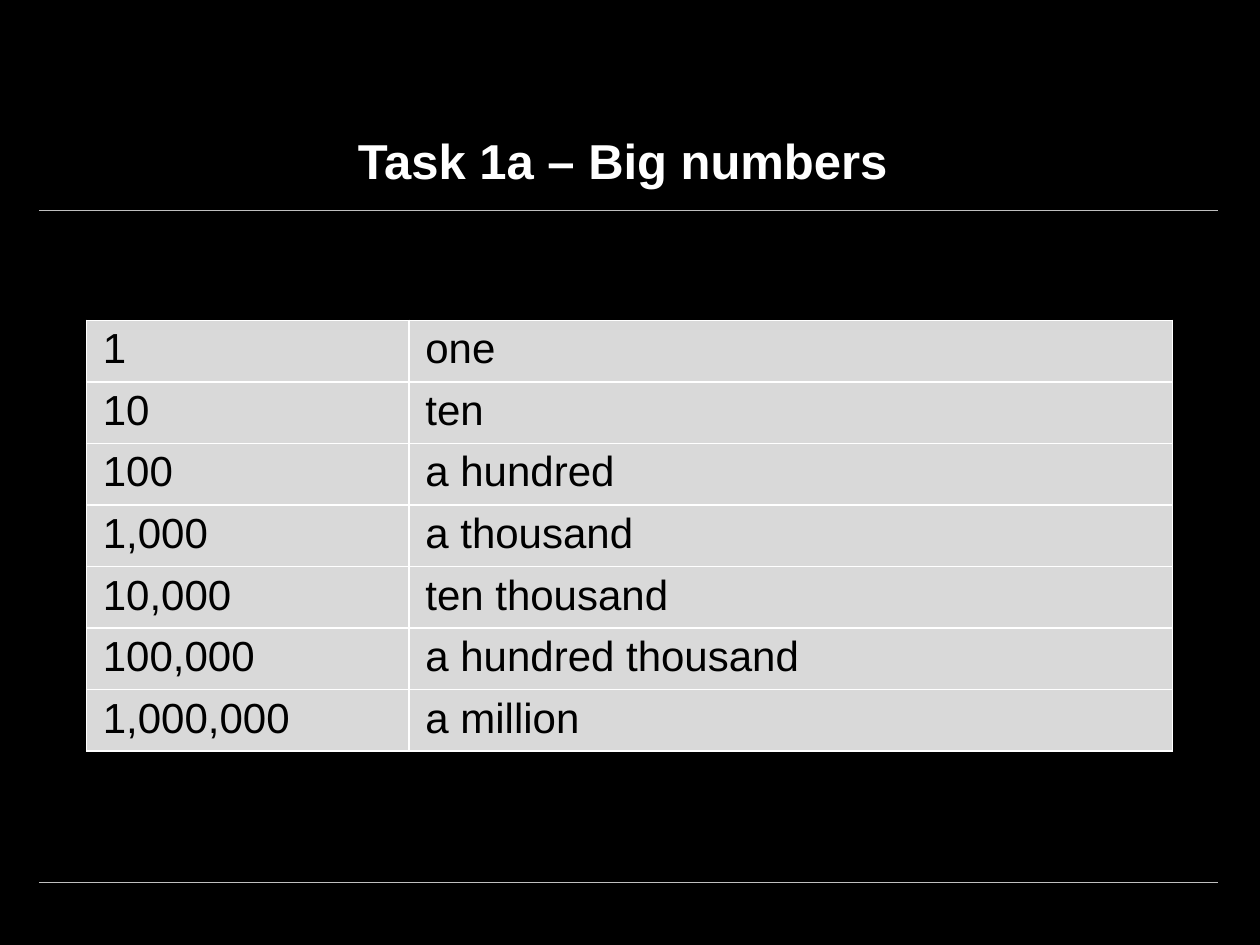
"""Build the "Big numbers" vocabulary slide."""
import dataclasses
import typing

import lxml.etree
import pptx
import pptx.dml.color
import pptx.enum.shapes
import pptx.enum.text
import pptx.oxml.ns
import pptx.slide
import pptx.table
import pptx.text.text
import pptx.util

Pt = pptx.util.Pt
Color = pptx.dml.color.RGBColor
Align = pptx.enum.text.PP_ALIGN
Anchor = pptx.enum.text.MSO_ANCHOR


@dataclasses.dataclass(frozen=True)
class Theme:
    background: str = "000000"
    rule: str = "BFBFBF"
    title: str = "FFFFFF"
    cell: str = "D9D9D9"
    cell_text: str = "000000"
    border: str = "FFFFFF"
    font: str = "Arial"
    title_size: float = 28
    cell_size: float = 24
    rule_width: float = 0.25
    border_width: float = 1


class Box(typing.NamedTuple):
    left: float
    top: float
    width: float
    height: float


class NumberRow(typing.NamedTuple):
    figure: str
    words: str


THEME = Theme()
RULE_LEFT, RULE_RIGHT = 22.3, 696.3
RULE_TOPS = (120.2, 504)
TITLE_BOX = Box(50.4, 8.6, 618.5, 103)
TABLE_BOX = Box(49.5, 183, 620.6, 238)
COLUMN_WIDTHS = (184.3, 436.3)
CELL_FORMAT = {
    "margin_left": Pt(9.3),
    "margin_right": Pt(9.3),
    "margin_top": Pt(3.2),
    "margin_bottom": Pt(3.2),
}
NUMBERS = (
    NumberRow("1", "one"),
    NumberRow("10", "ten "),
    NumberRow("100", "a hundred"),
    NumberRow("1,000", "a thousand"),
    NumberRow("10,000", "ten thousand"),
    NumberRow("100,000", "a hundred thousand"),
    NumberRow("1,000,000", "a million"),
)


def set_format(target: typing.Any, values: dict[str, typing.Any]) -> None:
    for name, value in values.items():
        setattr(target, name, value)


def write_text(frame: pptx.text.text.TextFrame, text: str, size: float,
               color: str, alignment: Align, bold: bool = False) -> None:
    paragraph = frame.paragraphs[0]
    paragraph.alignment = alignment
    run = paragraph.add_run()
    run.text = text
    set_format(run.font, {"name": THEME.font, "size": Pt(size), "bold": bold})
    run.font.color.rgb = Color.from_string(color)


def draw_rule(slide: pptx.slide.Slide, top: float) -> None:
    rule = slide.shapes.add_connector(
        pptx.enum.shapes.MSO_CONNECTOR.STRAIGHT,
        Pt(RULE_LEFT), Pt(top), Pt(RULE_RIGHT), Pt(top))
    rule.line.color.rgb = Color.from_string(THEME.rule)
    rule.line.width = Pt(THEME.rule_width)
    lxml.etree.SubElement(rule._element.spPr, pptx.oxml.ns.qn("a:effectLst"))


def draw_title(slide: pptx.slide.Slide, text: str) -> None:
    shape = slide.shapes.add_textbox(*map(Pt, TITLE_BOX))
    set_format(shape.text_frame,
               {"word_wrap": True, "vertical_anchor": Anchor.BOTTOM})
    write_text(shape.text_frame, text, THEME.title_size, THEME.title,
               Align.CENTER, bold=True)


def add_borders(cell: pptx.table._Cell) -> None:
    qn = pptx.oxml.ns.qn
    properties = cell._tc.get_or_add_tcPr()
    for side in ("lnL", "lnR", "lnT", "lnB"):
        line = lxml.etree.SubElement(properties, qn(f"a:{side}"),
                                     w=str(Pt(THEME.border_width)))
        fill = lxml.etree.SubElement(line, qn("a:solidFill"))
        lxml.etree.SubElement(fill, qn("a:srgbClr"), val=THEME.border)


def draw_table(slide: pptx.slide.Slide, rows: typing.Sequence[NumberRow]) -> None:
    table = slide.shapes.add_table(
        len(rows), len(COLUMN_WIDTHS), *map(Pt, TABLE_BOX)).table
    set_format(table, {"first_row": False, "horz_banding": False})
    for column, width in zip(table.columns, COLUMN_WIDTHS):
        column.width = Pt(width)
    for row, texts in zip(table.rows, rows):
        row.height = Pt(TABLE_BOX.height / len(rows))
        for cell, text in zip(row.cells, texts):
            set_format(cell, CELL_FORMAT)
            add_borders(cell)
            cell.fill.solid()
            cell.fill.fore_color.rgb = Color.from_string(THEME.cell)
            write_text(cell.text_frame, text, THEME.cell_size,
                       THEME.cell_text, Align.JUSTIFY)


def main() -> None:
    presentation = pptx.Presentation()
    set_format(presentation, {"slide_width": Pt(720), "slide_height": Pt(540)})
    slide = presentation.slides.add_slide(presentation.slide_layouts[6])
    slide.background.fill.solid()
    slide.background.fill.fore_color.rgb = Color.from_string(THEME.background)
    for top in RULE_TOPS:
        draw_rule(slide, top)
    draw_title(slide, "Task 1a – Big numbers ")
    draw_table(slide, NUMBERS)
    presentation.save("out.pptx")


if __name__ == "__main__":
    main()
